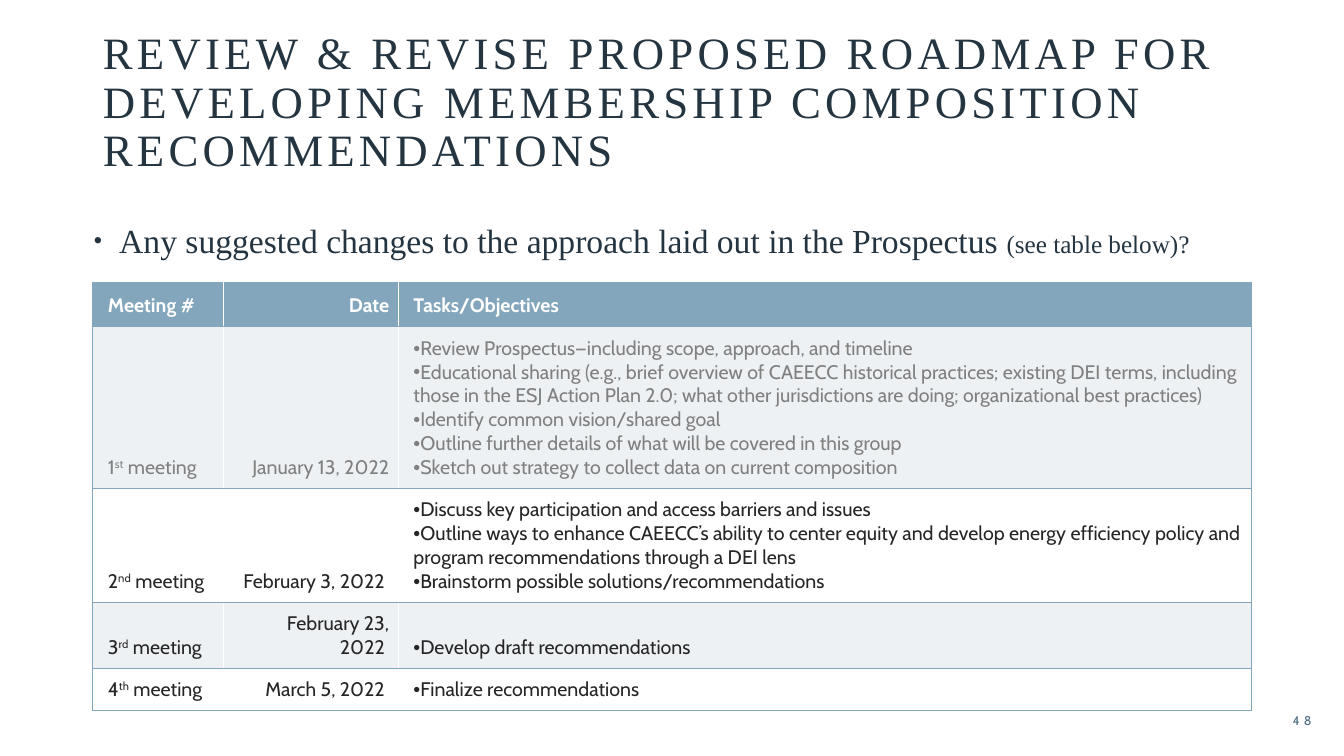
from dataclasses import dataclass

from lxml import etree
from pptx import Presentation
from pptx.dml.color import RGBColor
from pptx.enum.text import MSO_ANCHOR, MSO_AUTO_SIZE, PP_ALIGN
from pptx.oxml.ns import qn
from pptx.util import Cm, Pt

LEFT, RIGHT = PP_ALIGN.LEFT, PP_ALIGN.RIGHT
TOP, MIDDLE, BOTTOM = MSO_ANCHOR.TOP, MSO_ANCHOR.MIDDLE, MSO_ANCHOR.BOTTOM
NO_FIT = MSO_AUTO_SIZE.NONE

COLOURS = {
    "ink": "243541",
    "number": "486B83",
    "line": "83A6BC",
    "band": "EDF1F3",
    "white": "FFFFFF",
    "past": "808080",
    "text": "262626",
}
SERIF, SANS = "Times New Roman", "Cabin"
COLUMN_WIDTHS = (3.3, 4.4, 21.5)


@dataclass
class Meeting:
    number: str
    ordinal: str
    date: str
    tasks: list[str]
    height: float
    colour: str = "text"


MEETINGS = [
    Meeting("1", "st", "January 13, 2022", [
        "Review Prospectus—including scope, approach, and timeline ",
        "Educational sharing (e.g., brief overview of CAEECC historical practices; existing DEI "
        "terms, including those in the ESJ Action Plan 2.0; what other jurisdictions are doing; "
        "organizational best practices) ",
        "Identify common vision/shared goal ",
        "Outline further details of what will be covered in this group ",
        "Sketch out strategy to collect data on current composition ",
    ], 4.09, "past"),
    Meeting("2", "nd", "February 3, 2022 ", [
        "Discuss key participation and access barriers and issues ",
        "Outline ways to enhance CAEECC’s ability to center equity and develop energy efficiency "
        "policy and program recommendations through a DEI lens ",
        "Brainstorm possible solutions/recommendations ",
    ], 2.87),
    Meeting("3", "rd", "February 23, 2022 ", ["Develop draft recommendations "], 1.66),
    Meeting("4", "th", "March 5, 2022 ", ["Finalize recommendations "], 1.07),
]


def place(shape, left: float, top: float, width: float, height: float) -> None:
    shape.left, shape.top = Cm(left), Cm(top)
    shape.width, shape.height = Cm(width), Cm(height)


def style(para, face: str, size: float, colour: str, bold: bool = False,
          tracking: int = 0) -> None:
    font = para.font
    font.name, font.size, font.bold = face, Pt(size), bold
    font.color.rgb = RGBColor.from_string(COLOURS[colour])
    if tracking:
        para._p.get_or_add_pPr().get_or_add_defRPr().set("spc", str(tracking * 100))


def add_bullet(para, indent: float = 0, percent: int = 100) -> None:
    properties = para._p.get_or_add_pPr()
    properties.set("marL", str(Cm(indent)))
    properties.set("indent", str(-Cm(indent)))
    etree.SubElement(properties, qn("a:buSzPct"), val=str(percent * 1000))
    etree.SubElement(properties, qn("a:buFont"), typeface="Arial")
    etree.SubElement(properties, qn("a:buChar"), char="•")


def set_borders(cell, sides: str) -> None:
    properties = cell._tc.get_or_add_tcPr()
    for index, side in enumerate(side for side in "LRTB" if side in sides):
        line = etree.Element(qn(f"a:ln{side}"), w=str(Pt(1)))
        fill = etree.SubElement(line, qn("a:solidFill"))
        etree.SubElement(fill, qn("a:srgbClr"), val=COLOURS["line"])
        properties.insert(index, line)


def format_cell(cell, column: int, fill: str, colour: str, bold: bool = False) -> None:
    cell.fill.solid()
    cell.fill.fore_color.rgb = RGBColor.from_string(COLOURS[fill])
    cell.vertical_anchor = BOTTOM
    cell.margin_left = Cm(0.38)
    cell.margin_right = cell.margin_top = cell.margin_bottom = Cm(0.23)
    set_borders(cell, ("LTB", "TB", "RTB")[column])
    for para in cell.text_frame.paragraphs:
        para.alignment = RIGHT if column == 1 else LEFT
        style(para, SANS, 14, colour, bold)


def add_roadmap(page) -> None:
    frame = page.shapes.add_table(len(MEETINGS) + 1, len(COLUMN_WIDTHS),
                                  Cm(2.34), Cm(7.12), Cm(29.2), Cm(10.8))
    table = frame.table
    for column, width in zip(table.columns, COLUMN_WIDTHS):
        column.width = Cm(width)

    # Header row
    table.rows[0].height = Cm(1.1)
    for column, heading in enumerate(("Meeting # ", "Date", "Tasks/Objectives ")):
        cell = table.cell(0, column)
        cell.text = heading
        format_cell(cell, column, "line", "white", bold=True)

    # One row per meeting
    for row, meeting in enumerate(MEETINGS, start=1):
        table.rows[row].height = Cm(meeting.height)
        name, date, tasks = table.rows[row].cells
        para = name.text_frame.paragraphs[0]
        para.add_run().text = meeting.number
        ordinal = para.add_run()
        ordinal.text = meeting.ordinal
        ordinal._r.get_or_add_rPr().set("baseline", "30000")
        para.add_run().text = " meeting "
        date.text = meeting.date
        tasks.text = "\n".join(meeting.tasks)
        for para in tasks.text_frame.paragraphs:
            add_bullet(para)
        for column, cell in enumerate((name, date, tasks)):
            format_cell(cell, column, "band" if row % 2 else "white", meeting.colour)


def main() -> None:
    deck = Presentation()
    deck.slide_width, deck.slide_height = Cm(33.87), Cm(19.05)
    page = deck.slides.add_slide(deck.slide_layouts[1])

    # Title
    title = page.shapes.title
    place(title, 2.34, 1.09, 29.2, 3.48)
    title.text_frame.auto_size = NO_FIT
    title.text_frame.vertical_anchor = BOTTOM
    title.text_frame.text = ("REVIEW & REVISE PROPOSED ROADMAP FOR DEVELOPING "
                             "MEMBERSHIP COMPOSITION RECOMMENDATIONS")
    para = title.text_frame.paragraphs[0]
    para.alignment, para.line_spacing = LEFT, 0.9
    style(para, SERIF, 32, "ink", tracking=3)

    # Question
    body = page.placeholders[1]
    place(body, 2.11, 5.41, 29.2, 10.49)
    body.text_frame.auto_size = NO_FIT
    body.text_frame.vertical_anchor = TOP
    para = body.text_frame.paragraphs[0]
    para.space_before = Pt(10)
    add_bullet(para, 0.64, 70)
    style(para, SERIF, 24, "ink")
    para.add_run().text = "Any suggested changes to the approach laid out in the Prospectus "
    aside = para.add_run()
    aside.text = "(see table below)?"
    aside.font.size = Pt(18)

    # Meeting table
    add_roadmap(page)

    # Page number
    box = page.shapes.add_textbox(Cm(30.89), Cm(17.65), Cm(2.41), Cm(1.02))
    box.text_frame.word_wrap = True
    box.text_frame.vertical_anchor = MIDDLE
    box.text_frame.text = "48"
    para = box.text_frame.paragraphs[0]
    para.alignment = RIGHT
    style(para, SANS, 9, "number", tracking=3)

    deck.save("out.pptx")


if __name__ == "__main__":
    main()
